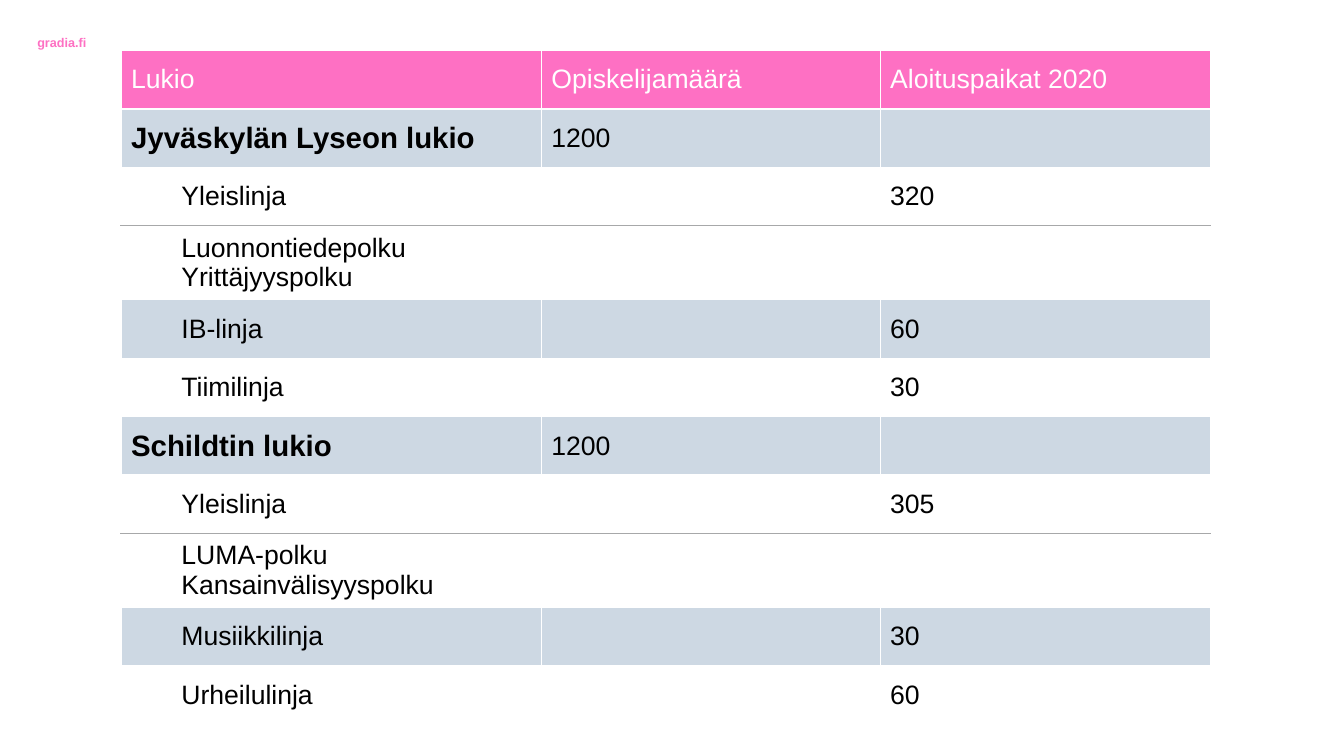
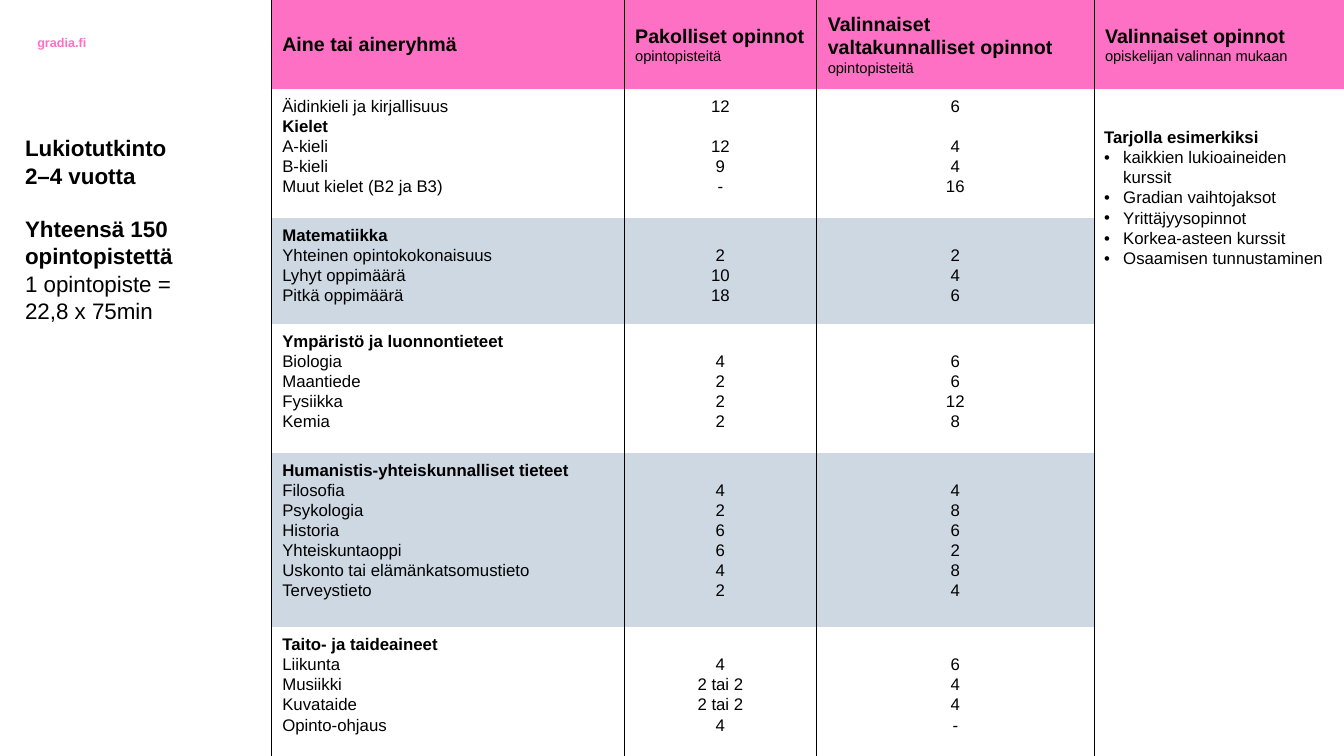
from pptx import Presentation
from pptx.dml.color import RGBColor
from pptx.enum.text import MSO_ANCHOR, PP_ALIGN
from pptx.oxml.ns import qn
from pptx.util import Inches, Pt
from lxml.etree import SubElement

# Shared look
FONT = "Arial"
PINK, BLUE, WHITE, BLACK, GREY = "FE70C3", "CDD8E3", "FFFFFF", "000000", "A7A8A9"
PLAIN = "{2D5ABB26-0587-4C30-8999-92F81FD0307C}"  # table style without lines or fills


def write(frame, lines, color=BLACK, align=PP_ALIGN.LEFT, space=1.0, left=0):
    """Write (text, size, bold) lines; an empty text is a gap of one line."""
    gap, first = 0, True
    for text, size, bold in lines:
        if not text:
            gap += size * space * 1.12
            continue
        para = frame.paragraphs[0] if first else frame.add_paragraph()
        props = para._p.get_or_add_pPr()
        if text.startswith("•"):
            text = text[1:]
            props.set("marL", str(Inches(0.19)))
            props.set("indent", str(Inches(-0.19)))
            SubElement(props, qn("a:buFont"), typeface=FONT)
            SubElement(props, qn("a:buChar"), char="•")
        elif left:
            props.set("marL", str(Inches(left)))
        if gap and not first:
            para.space_before = Pt(gap)
        gap, first = 0, False
        para.text, para.alignment, para.line_spacing = text, align, space
        font = para.font
        font.name, font.size, font.bold = FONT, Pt(size), bold
        font.color.rgb = RGBColor.from_string(color)


def paint(cell, fill, **lines):
    """Draw the cell's side lines, given as L, R, T, B=(colour, width), then fill it."""
    props = cell._tc.get_or_add_tcPr()
    for side in "LRTB":
        if side in lines:
            color, width = lines[side]
            line = SubElement(props, qn("a:ln" + side), w=str(Pt(width)))
            solid = SubElement(line, qn("a:solidFill"))
            SubElement(solid, qn("a:srgbClr"), val=color)
    cell.fill.solid()
    cell.fill.fore_color.rgb = RGBColor.from_string(fill)


deck = Presentation()
deck.slide_width, deck.slide_height = Inches(13.33), Inches(7.5)
blank = deck.slide_layouts[6]
schools, studies = [deck.slides.add_slide(blank) for _ in range(2)]

# Address in the corner, kept on the layout
mark = schools.shapes.add_textbox(Inches(0.37), Inches(0.35), Inches(0.84), Inches(0.17))
frame = mark.text_frame
frame.margin_left = frame.margin_top = frame.margin_right = frame.margin_bottom = 0
write(frame, [("gradia.fi", 9, True)], PINK)
blank.shapes.element.append(mark.element)

# Both tables: place, column widths and row heights
TABLES = [
    (schools, 1.2, 0.5, [4.17, 3.36, 3.28],
     [0.58] * 3 + [0.73] + [0.58] * 4 + [0.73] + [0.58] * 2),
    (studies, 2.69, 0, [3.5, 1.91, 2.75, 2.48], [0.88, 1.28, 1.05, 1.28, 1.73, 1.28]),
]
grids = []
for slide, x, y, cols, rows in TABLES:
    grid = slide.shapes.add_table(
        len(rows), len(cols), Inches(x), Inches(y),
        Inches(sum(cols)), Inches(sum(rows))).table
    grid._tbl.tblPr.find(qn("a:tableStyleId")).text = PLAIN
    grid.horz_banding = False
    for col, width in zip(grid.columns, cols):
        col.width = Inches(width)
    for row, height in zip(grid.rows, rows):
        row.height = Inches(height)
    grids.append(grid)

# Slide 1: schools, their lines and places
PLACES = [
    ("Lukio", "Opiskelijamäärä", "Aloituspaikat 2020"),
    ("Jyväskylän Lyseon lukio", "1200", ""),
    ("Yleislinja", "", "320"),
    ("Luonnontiedepolku\nYrittäjyyspolku", "", ""),
    ("IB-linja", "", "60"),
    ("Tiimilinja", "", "30"),
    ("Schildtin lukio", "1200", ""),
    ("Yleislinja", "", "305"),
    ("LUMA-polku\nKansainvälisyyspolku", "", ""),
    ("Musiikkilinja", "", "30"),
    ("Urheilulinja", "", "60"),
]
thin, thick, rule = (WHITE, 1), (WHITE, 1.5), (GREY, 0.5)
for r, texts in enumerate(PLACES):
    head, school, tracks = r == 0, r in (1, 6), r in (3, 8)
    fill = PINK if head else BLUE if school or r in (4, 9) else WHITE
    top = thick if r == 1 else rule if tracks else thin
    base = thick if head else rule if r in (2, 7) else thin
    for c, text in enumerate(texts):
        cell = grids[0].cell(r, c)
        paint(cell, fill, L=thin, R=thin, T=top, B=base)
        cell.vertical_anchor = MSO_ANCHOR.MIDDLE
        name = school and c == 0
        lines = [(part, 21 if name else 19, name) for part in text.split("\n")]
        write(cell.text_frame, lines, WHITE if head else BLACK,
              left=0.5 if c == 0 and not head and not school else 0)

# Slide 2: subjects with compulsory and optional credits
HEADS = [
    ("Aine tai aineryhmä", ""),
    ("Pakolliset opinnot", "opintopisteitä"),
    ("Valinnaiset valtakunnalliset opinnot", "opintopisteitä"),
    ("Valinnaiset opinnot", "opiskelijan valinnan mukaan"),
]
GROUPS = [
    [("Äidinkieli ja kirjallisuus", "12", "6"), ("Kielet", "", ""), ("A-kieli", "12", "4"),
     ("B-kieli", "9", "4"), ("Muut kielet (B2 ja B3)", "-", "16")],
    [("Matematiikka", "", ""), ("Yhteinen opintokokonaisuus", "2", "2"),
     ("Lyhyt oppimäärä", "10", "4"), ("Pitkä oppimäärä", "18", "6")],
    [("Ympäristö ja luonnontieteet", "", ""), ("Biologia", "4", "6"),
     ("Maantiede", "2", "6"), ("Fysiikka", "2", "12"), ("Kemia", "2", "8")],
    [("Humanistis-yhteiskunnalliset tieteet", "", ""), ("Filosofia", "4", "4"),
     ("Psykologia", "2", "8"), ("Historia", "6", "6"), ("Yhteiskuntaoppi", "6", "2"),
     ("Uskonto tai elämänkatsomustieto", "4", "8"), ("Terveystieto", "2", "4")],
    [("Taito- ja taideaineet", "", ""), ("Liikunta", "4", "6"), ("Musiikki", "2 tai 2", "4"),
     ("Kuvataide", "2 tai 2", "4"), ("Opinto-ohjaus", "4", "-")],
]
OFFERS = ["kaikkien lukioaineiden kurssit", "Gradian vaihtojaksot", "Yrittäjyysopinnot",
          "Korkea-asteen kurssit", "Osaamisen tunnustaminen"]
grid, ink = grids[1], (BLACK, 0.75)
for r in range(6):
    for c in range(4):
        cell = grid.cell(r, c)
        fill = PINK if r == 0 else BLUE if r in (2, 4) and c < 3 else WHITE
        paint(cell, fill, L=ink, **({"R": ink} if c < 3 else {}))
        cell.margin_left = cell.margin_right = Inches(0.11)
        cell.margin_top = cell.margin_bottom = Inches(0.07)
        if r == 0:
            cell.vertical_anchor = MSO_ANCHOR.MIDDLE
            title, note = HEADS[c]
            write(cell.text_frame, [(title, 14, True), (note, 10.5, False)], space=1.07)
        elif c < 3:
            # A subject without credits is a bold heading
            lines = [(row[c], 12, not row[1]) for row in GROUPS[r - 1]]
            if not lines[0][0]:
                # Credits start one line down, beside the first subject
                cell.margin_top = Inches(0.27)
            align = PP_ALIGN.CENTER if c else PP_ALIGN.LEFT
            write(cell.text_frame, lines, align=align, space=1.07)

# Free choices, one cell beside all the groups
cell = grid.cell(1, 3)
cell.merge(grid.cell(5, 3))
cell.margin_left = cell.margin_right = Inches(0.1)
cell.margin_top = Inches(0.38)
write(cell.text_frame, [("Tarjolla esimerkiksi", 12, True)]
      + [("•" + text, 12, False) for text in OFFERS], space=1.07)

# Summary beside the table
box = studies.shapes.add_textbox(Inches(0.15), Inches(1.28), Inches(2.13), Inches(1.99))
box.text_frame.word_wrap = True
write(box.text_frame, [
    ("Lukiotutkinto", 16, True), ("2–4 vuotta", 16, True), ("", 16, True),
    ("Yhteensä 150 opintopistettä", 16, True),
    ("1 opintopiste =", 16, False), ("22,8 x 75min", 16, False)], space=1.02)

deck.save("out.pptx")
